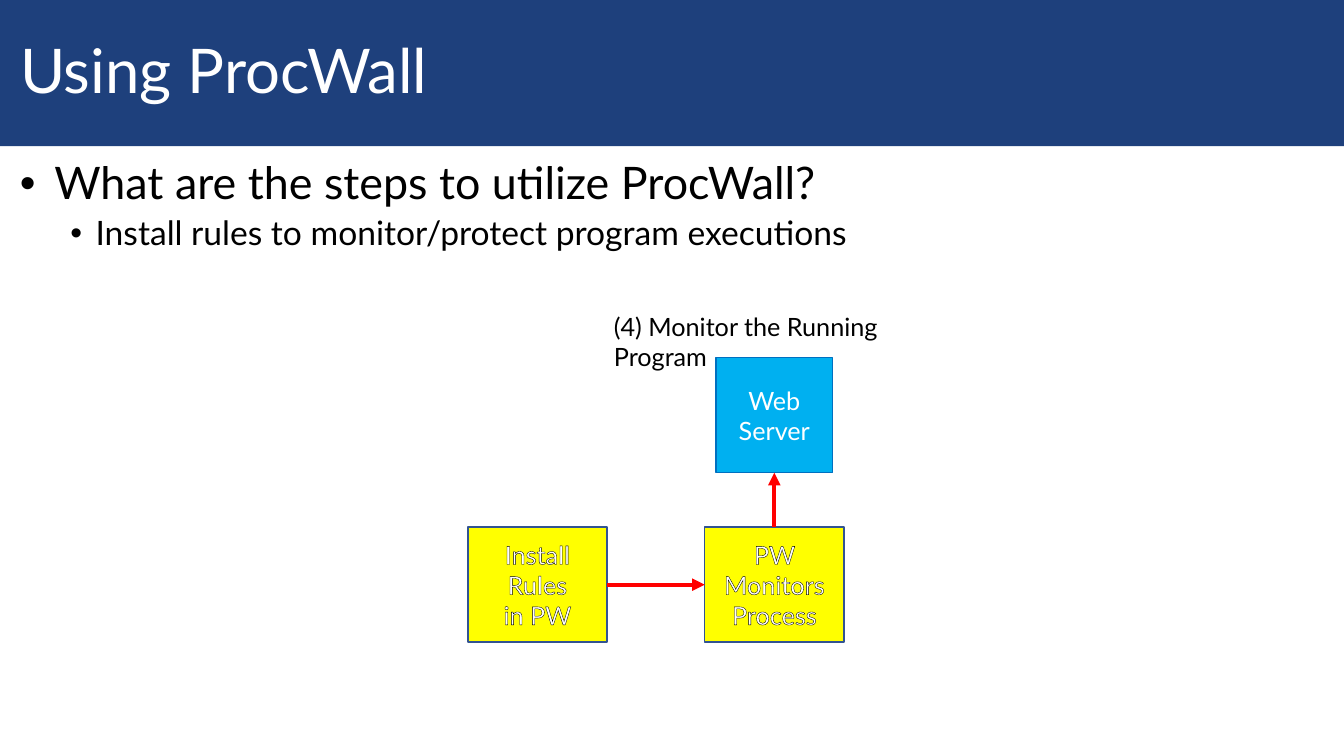
"""Builds the slide on the steps for using ProcWall."""
import lxml.etree
import pptx
import pptx.dml.color
import pptx.enum.shapes
import pptx.enum.text
import pptx.oxml.ns
import pptx.util

PX = 9144
FONT = "Lato"
WHITE = pptx.dml.color.RGBColor(0xFF, 0xFF, 0xFF)
BLACK = pptx.dml.color.RGBColor(0, 0, 0)
NAVY = pptx.dml.color.RGBColor(0x1E, 0x40, 0x7C)
SKY = pptx.dml.color.RGBColor(0x00, 0xB0, 0xF0)
BLUE = pptx.dml.color.RGBColor(0x00, 0x70, 0xC0)
YELLOW = pptx.dml.color.RGBColor(0xFF, 0xFF, 0x00)
STEEL = pptx.dml.color.RGBColor(0x32, 0x54, 0x91)
RED = pptx.dml.color.RGBColor(0xFF, 0, 0)
TOP, LEFT, BOTTOM, RIGHT = range(4)


def add_child(parent, tag, **attributes):
    """Append a drawing element to its parent."""
    return lxml.etree.SubElement(parent, pptx.oxml.ns.qn(tag), attributes)


def set_font(paragraph, size, color):
    """Set the font of a whole paragraph."""
    paragraph.font.name = FONT
    paragraph.font.size = pptx.util.Pt(size)
    paragraph.font.color.rgb = color


def outline_text(paragraph):
    """Draw a thin black line round the letters."""
    for run in paragraph.runs:
        properties = run._r.get_or_add_rPr()
        line = lxml.etree.Element(pptx.oxml.ns.qn("a:ln"), w=str(pptx.util.Pt(0.75)))
        add_child(add_child(line, "a:solidFill"), "a:srgbClr", val=str(BLACK))
        properties.insert(0, line)


def add_rectangle(slide, bounds, fill, line=None):
    """Add a flat rectangle with vertically centred text."""
    shape = slide.shapes.add_shape(
        pptx.enum.shapes.MSO_SHAPE.RECTANGLE, *(value * PX for value in bounds))
    shape.shadow.inherit = False
    shape.fill.solid()
    shape.fill.fore_color.rgb = fill
    if line is None:
        shape.line.fill.background()
    else:
        shape.line.color.rgb = line
        shape.line.width = pptx.util.Pt(1)
    shape.text_frame.word_wrap = True
    shape.text_frame.vertical_anchor = pptx.enum.text.MSO_ANCHOR.MIDDLE
    return shape


def add_banner(slide, text):
    """Add the title banner across the top."""
    frame = add_rectangle(slide, (0, 0, 1333, 145), NAVY).text_frame
    frame.margin_left = 20 * PX
    frame.text = text
    paragraph = frame.paragraphs[0]
    paragraph.alignment = pptx.enum.text.PP_ALIGN.LEFT
    paragraph.line_spacing = 0.9
    set_font(paragraph, 44, WHITE)


def add_box(slide, bounds, lines, fill, line, outlined=False):
    """Add a diagram box with centred lines of text."""
    shape = add_rectangle(slide, bounds, fill, line)
    shape.text_frame.text = "\n".join(lines)
    for paragraph in shape.text_frame.paragraphs:
        paragraph.alignment = pptx.enum.text.PP_ALIGN.CENTER
        set_font(paragraph, 18, WHITE)
        if outlined:
            outline_text(paragraph)
    return shape


def add_text(slide, bounds, text):
    """Add a wrapping text box and return its paragraphs."""
    box = slide.shapes.add_textbox(*(value * PX for value in bounds))
    box.text_frame.word_wrap = True
    box.text_frame.text = text
    return box.text_frame.paragraphs


def set_bullet(paragraph, level, margin, hanging):
    """Give a paragraph a bullet with a hanging indent."""
    paragraph.level = level
    paragraph.line_spacing = 0.9
    if level:
        paragraph.space_before = pptx.util.Pt(5)
    properties = paragraph._p.get_or_add_pPr()
    properties.set("marL", str(margin * PX))
    properties.set("indent", str(-hanging * PX))
    add_child(properties, "a:buFont", typeface="Arial")
    add_child(properties, "a:buChar", char="•")


def add_arrow(slide, start, start_side, end, end_side):
    """Join two boxes with a red arrow."""
    connector = slide.shapes.add_connector(
        pptx.enum.shapes.MSO_CONNECTOR.STRAIGHT, 0, 0, 0, 0)
    connector.begin_connect(start, start_side)
    connector.end_connect(end, end_side)
    connector.line.color.rgb = RED
    connector.line.width = pptx.util.Pt(3)
    add_child(connector.line._get_or_add_ln(), "a:tailEnd", type="triangle")
    add_child(connector._element.spPr, "a:effectLst")


def main():
    """Build and save the slide."""
    presentation = pptx.Presentation()
    presentation.slide_width = pptx.util.Inches(13.33)
    presentation.slide_height = pptx.util.Inches(7.5)
    slide = presentation.slides.add_slide(presentation.slide_layouts[6])

    add_banner(slide, "Using ProcWall")
    question, step = add_text(
        slide, (10, 155, 1307, 584),
        "What are the steps to utilize ProcWall?\n"
        "Install rules to monitor/protect program executions")
    set_bullet(question, 0, 34, 34)
    set_font(question, 32, BLACK)
    set_bullet(step, 1, 75, 25)
    set_font(step, 24, BLACK)

    server = add_box(slide, (710, 355, 116, 114), ("Web", "Server"), SKY, BLUE)
    install, monitor = [
        add_box(slide, (left, 523, 138, 114), lines, YELLOW, STEEL, outlined=True)
        for left, lines in ((464, ("Install Rules", "in PW")),
                            (699, ("PW Monitors", "Process")))]
    label, = add_text(slide, (599, 304, 369, 40), "(4) Monitor the Running Program")
    set_font(label, 18, BLACK)
    add_arrow(slide, install, RIGHT, monitor, LEFT)
    add_arrow(slide, monitor, TOP, server, BOTTOM)

    presentation.save("out.pptx")


if __name__ == "__main__":
    main()
